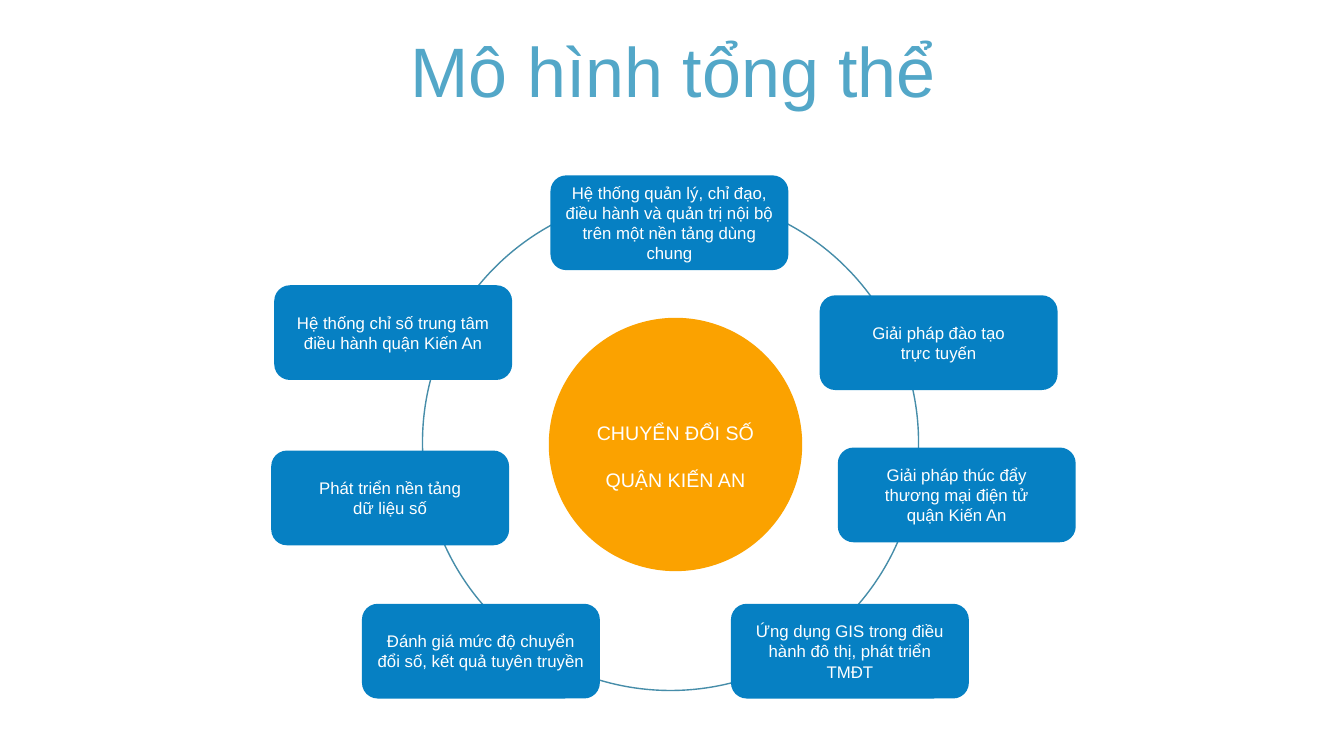
from pptx import Presentation
from pptx.dml.color import RGBColor
from pptx.enum.shapes import MSO_SHAPE
from pptx.enum.text import MSO_ANCHOR, MSO_AUTO_SIZE, PP_ALIGN
from pptx.util import Pt

EMU_PER_PX = 9144  # 100 px to the inch
TITLE_ONLY_LAYOUT = 5
ROUNDED = MSO_SHAPE.ROUNDED_RECTANGLE
CIRCLE = MSO_SHAPE.FLOWCHART_CONNECTOR
MIDDLE = MSO_ANCHOR.MIDDLE
CENTER = PP_ALIGN.CENTER
NO_AUTOFIT = MSO_AUTO_SIZE.NONE

WHITE = "FFFFFF"
TITLE_BLUE = "53A7C8"
RING_BLUE = "468DA9"
BOX_BLUE = "0680C3"
ORANGE = "FBA200"

BOX_WIDTH, BOX_HEIGHT = 236, 94
SOLUTIONS = [
    (546, 174, "Hệ thống quản lý, chỉ đạo, điều hành và quản trị nội bộ "
               "trên một nền tảng dùng chung"),
    (813, 293, "Giải pháp đào tạo\ntrực tuyến"),
    (831, 444, "Giải pháp thúc đẩy\nthương mại điện tử\nquận Kiến An"),
    (725, 599, "Ứng dụng GIS trong điều hành đô thị, phát triển TMĐT"),
    (359, 599, "Đánh giá mức độ chuyển đổi số, kết quả tuyên truyền"),
    (269, 447, "Phát triển nền tảng\ndữ liệu số"),
    (272, 283, "Hệ thống chỉ số trung tâm điều hành quận Kiến An"),
]


def px(length):
    return length * EMU_PER_PX


def color(hex_string):
    return RGBColor.from_string(hex_string)


class SlideBuilder:
    font = "Arial"

    def __init__(self, slide):
        self.slide = slide

    def set_text(self, shape, text, size, hex_string, line_spacing=1.0):
        frame = shape.text_frame
        frame.text = text
        frame.word_wrap = True
        frame.auto_size = NO_AUTOFIT
        frame.vertical_anchor = MIDDLE
        for paragraph in frame.paragraphs:
            paragraph.alignment = CENTER
            paragraph.line_spacing = line_spacing
            for run in paragraph.runs:
                run.font.name = self.font
                run.font.size = Pt(size)
                run.font.color.rgb = color(hex_string)

    def title(self, left, top, width, height, text):
        shape = self.slide.shapes.title
        shape.left, shape.top = px(left), px(top)
        shape.width, shape.height = px(width), px(height)
        self.set_text(shape, text, 50, TITLE_BLUE, 0.8)

    def shape(self, kind, left, top, width, height, fill, line=None):
        shape = self.slide.shapes.add_shape(
            kind, px(left), px(top), px(width), px(height))
        shape.shadow.inherit = False
        shape.fill.solid()
        shape.fill.fore_color.rgb = color(fill)
        if line:
            shape.line.color.rgb = color(line)
            shape.line.width = Pt(1)
        else:
            shape.line.fill.background()
        return shape

    def circle(self, left, top, diameter, fill, line):
        return self.shape(CIRCLE, left, top, diameter, diameter, fill, line)

    def solution(self, left, top, text):
        box = self.shape(ROUNDED, left, top, BOX_WIDTH, BOX_HEIGHT, BOX_BLUE)
        self.set_text(box, text, 12, WHITE)


def main():
    presentation = Presentation()
    presentation.slide_width, presentation.slide_height = px(1333), px(750)
    layout = presentation.slide_layouts[TITLE_ONLY_LAYOUT]
    builder = SlideBuilder(presentation.slides.add_slide(layout))

    builder.title(35, 37, 1266, 79, "Mô hình tổng thể")
    builder.circle(419, 193, 492, WHITE, RING_BLUE)
    for left, top, text in SOLUTIONS:
        builder.solution(left, top, text)
    hub = builder.circle(545, 316, 250, ORANGE, ORANGE)
    builder.set_text(hub, "CHUYỂN ĐỔI SỐ\nQUẬN KIẾN AN", 14, WHITE, 2.0)

    presentation.save("out.pptx")


if __name__ == "__main__":
    main()
